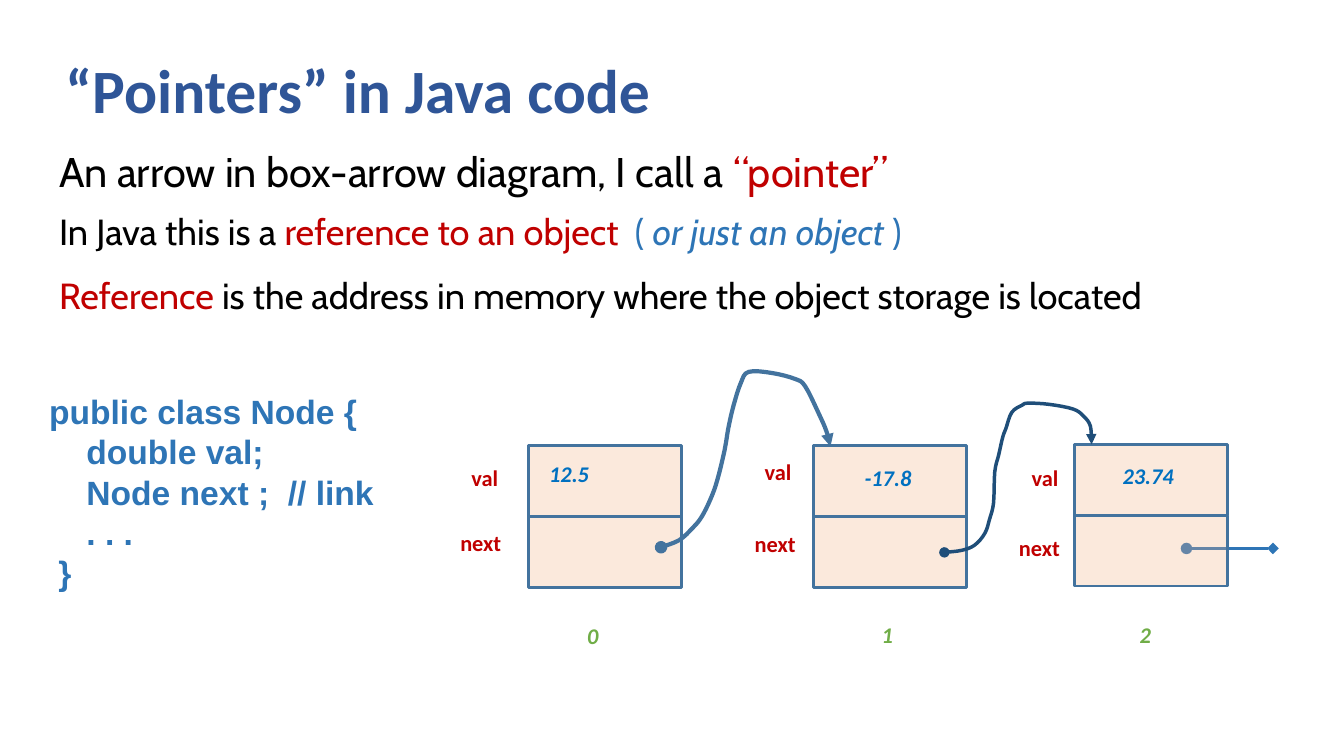
from dataclasses import dataclass

import lxml.etree
import pptx
import pptx.dml.color
import pptx.enum.shapes
import pptx.enum.text
import pptx.oxml.ns
import pptx.util

Cm = pptx.util.Cm
Point = tuple[float, float]

BLUE = "2E75B6"
RED = "C00000"
BLACK = "000000"
OUTLINE = "43739E"
CELL_WIDTH, CELL_HEIGHT = 3.86, 1.78
ROW_PITCH = 1.79
LABEL_SIZE = (1.88, 1.3)
VALUE_SIZE = (2.21, 1.3)
INDEX_SIZE = (1.37, 1.4)


@dataclass
class Run:
    text: str
    color: str
    italic: bool = False


@dataclass
class Line:
    runs: list[Run]
    size: float
    before: float = 0


@dataclass
class Node:
    index: str
    value: str
    corner: Point
    value_at: Point
    val_at: Point
    next_at: Point
    index_at: Point


@dataclass
class Pointer:
    points: list[Point]
    color: str
    width: float


def rgb(color: str) -> pptx.dml.color.RGBColor:
    return pptx.dml.color.RGBColor.from_string(color)


def add_element(parent, tag: str, **attributes: str):
    element = lxml.etree.SubElement(parent, pptx.oxml.ns.qn(tag))
    for name, value in attributes.items():
        element.set(name, value)
    return element


def add_text(slide, lines: list[Line], at: Point, size: Point, *, font: str = "Calibri",
             bold: bool = True, spacing: float = 1.0, middle: bool = False) -> None:
    frame = slide.shapes.add_textbox(*map(Cm, at + size)).text_frame
    frame.word_wrap = True
    anchor = pptx.enum.text.MSO_ANCHOR
    frame.vertical_anchor = anchor.MIDDLE if middle else anchor.TOP
    for number, line in enumerate(lines):
        paragraph = frame.add_paragraph() if number else frame.paragraphs[0]
        paragraph.line_spacing = spacing
        paragraph.space_before = pptx.util.Pt(line.before)
        for part in line.runs:
            run = paragraph.add_run()
            run.text = part.text
            run.font.name = font
            run.font.size = pptx.util.Pt(line.size)
            run.font.bold = bold
            run.font.italic = part.italic
            run.font.color.rgb = rgb(part.color)


def add_label(slide, text: str, at: Point, size: Point, color: str, italic: bool = False) -> None:
    add_text(slide, [Line([Run(text, color, italic)], 16)], at, size)


def style_arrow(shape, color: str, width: float, tail: str) -> None:
    shape.line.color.rgb = rgb(color)
    shape.line.width = pptx.util.Pt(width)
    outline = shape.line._get_or_add_ln()
    add_element(outline, "a:headEnd", type="oval")
    add_element(outline, "a:tailEnd", type=tail)


def add_node(slide, node: Node) -> None:
    left, top = node.corner
    for row in range(2):
        cell = slide.shapes.add_shape(
            pptx.enum.shapes.MSO_SHAPE.RECTANGLE, Cm(left), Cm(top + row * ROW_PITCH),
            Cm(CELL_WIDTH), Cm(CELL_HEIGHT))
        cell.shadow.inherit = False
        cell.fill.solid()
        cell.fill.fore_color.rgb = rgb("F4B183")
        color = cell.fill._xPr.find(".//" + pptx.oxml.ns.qn("a:srgbClr"))
        add_element(color, "a:alpha", val="28000")
        cell.line.color.rgb = rgb(OUTLINE)
        cell.line.width = pptx.util.Pt(2)
    add_label(slide, node.value, node.value_at, VALUE_SIZE, "0070C0", italic=True)
    add_label(slide, "val", node.val_at, LABEL_SIZE, RED)
    add_label(slide, "next", node.next_at, LABEL_SIZE, RED)
    add_label(slide, node.index, node.index_at, INDEX_SIZE, "70AD47", italic=True)


def smooth(points: list[Point], steps: int = 4) -> list[Point]:
    padded = [points[0], *points, points[-1]]
    result = [points[0]]
    for a, b, c, d in zip(padded, padded[1:], padded[2:], padded[3:]):
        for step in range(1, steps + 1):
            t = step / steps
            x, y = (0.5 * (2 * q + (r - p) * t + (2 * p - 5 * q + 4 * r - s) * t ** 2
                           + (3 * q - p - 3 * r + s) * t ** 3)
                    for p, q, r, s in zip(a, b, c, d))
            result.append((x, y))
    return result


def add_pointer(slide, pointer: Pointer) -> None:
    points = [(Cm(x), Cm(y)) for x, y in smooth(pointer.points)]
    builder = slide.shapes.build_freeform(*points[0])
    builder.add_line_segments(points[1:], close=False)
    curve = builder.convert_to_shape()
    curve.shadow.inherit = False
    curve.fill.background()
    style_arrow(curve, pointer.color, pointer.width, "triangle")


def add_end_marker(slide) -> None:
    connector = slide.shapes.add_connector(
        pptx.enum.shapes.MSO_CONNECTOR.STRAIGHT, Cm(29.9), Cm(13.82), Cm(32.08), Cm(13.82))
    style_arrow(connector, BLUE, 2.75, "diamond")
    add_element(connector._element.spPr, "a:effectLst")


TITLE = [Line([Run("“Pointers” in Java code", "2F5597")], 44)]
BODY = [
    Line([Run("An arrow in box-arrow diagram, I call a ", BLACK), Run("“pointer”", RED)], 29.6),
    Line([Run("In Java this is a ", BLACK), Run("reference to an object ", RED),
          Run(" ( ", BLUE), Run("or just an object ", BLUE, True), Run(")", BLUE)], 25.9, 12),
    Line([Run("Reference ", RED),
          Run("is the address in memory where the object storage is located", BLACK)], 25.9, 18),
]
CODE = """public class Node {
    double val;
    Node next ;  // link
    . . .
 }"""
NODES = [
    Node("0", "12.5", (13.31, 11.23), (13.59, 11.46), (11.63, 11.58), (11.35, 13.21), (14.55, 15.54)),
    Node("1", "-17.8", (20.5, 11.23), (21.54, 11.56), (19.02, 11.43), (18.77, 13.23), (21.97, 15.52)),
    Node("2", "23.74", (27.08, 11.2), (28.04, 11.53), (25.75, 11.56), (25.43, 13.34), (28.47, 15.52)),
]
FIRST_POINTER = Pointer([
    (16.66, 13.79), (17.12, 13.61), (17.45, 13.31), (17.68, 13.03), (17.91, 12.57),
    (18.08, 12.09), (18.26, 11.35), (18.36, 10.77), (18.49, 10.21), (18.67, 9.65),
    (18.87, 9.37), (19.46, 9.4), (20.04, 9.55), (20.29, 9.73), (20.62, 10.39),
    (20.83, 10.87), (20.93, 11.25)], OUTLINE, 3)
SECOND_POINTER = Pointer([
    (23.8, 13.92), (24.23, 13.87), (24.56, 13.74), (24.82, 13.44), (24.94, 13.08),
    (25.04, 12.67), (25.07, 11.89), (25.17, 11.46), (25.27, 11.02), (25.35, 10.8),
    (25.5, 10.39), (25.76, 10.21), (25.91, 10.16), (26.44, 10.19), (27.05, 10.31),
    (27.31, 10.49), (27.48, 10.74), (27.51, 11.2)], "1F4E79", 2.5)


def main() -> None:
    presentation = pptx.Presentation()
    presentation.slide_width, presentation.slide_height = Cm(33.87), Cm(19.05)
    slide = presentation.slides.add_slide(presentation.slide_layouts[6])
    add_text(slide, TITLE, (1.4, 1.02), (30.12, 2.69), spacing=0.9, middle=True)
    add_text(slide, BODY, (1.24, 3.71), (29.26, 4.65), font="Cabin", bold=False, spacing=0.9)
    code_lines = [Line([Run(text, BLUE)], 24) for text in CODE.splitlines()]
    add_text(slide, code_lines, (0.99, 9.7), (12.6, 5.38), font="Arial", middle=True)
    first, second, last = NODES
    add_node(slide, first)
    add_node(slide, second)
    add_pointer(slide, FIRST_POINTER)
    add_end_marker(slide)
    add_node(slide, last)
    add_pointer(slide, SECOND_POINTER)
    presentation.save("out.pptx")


if __name__ == "__main__":
    main()
